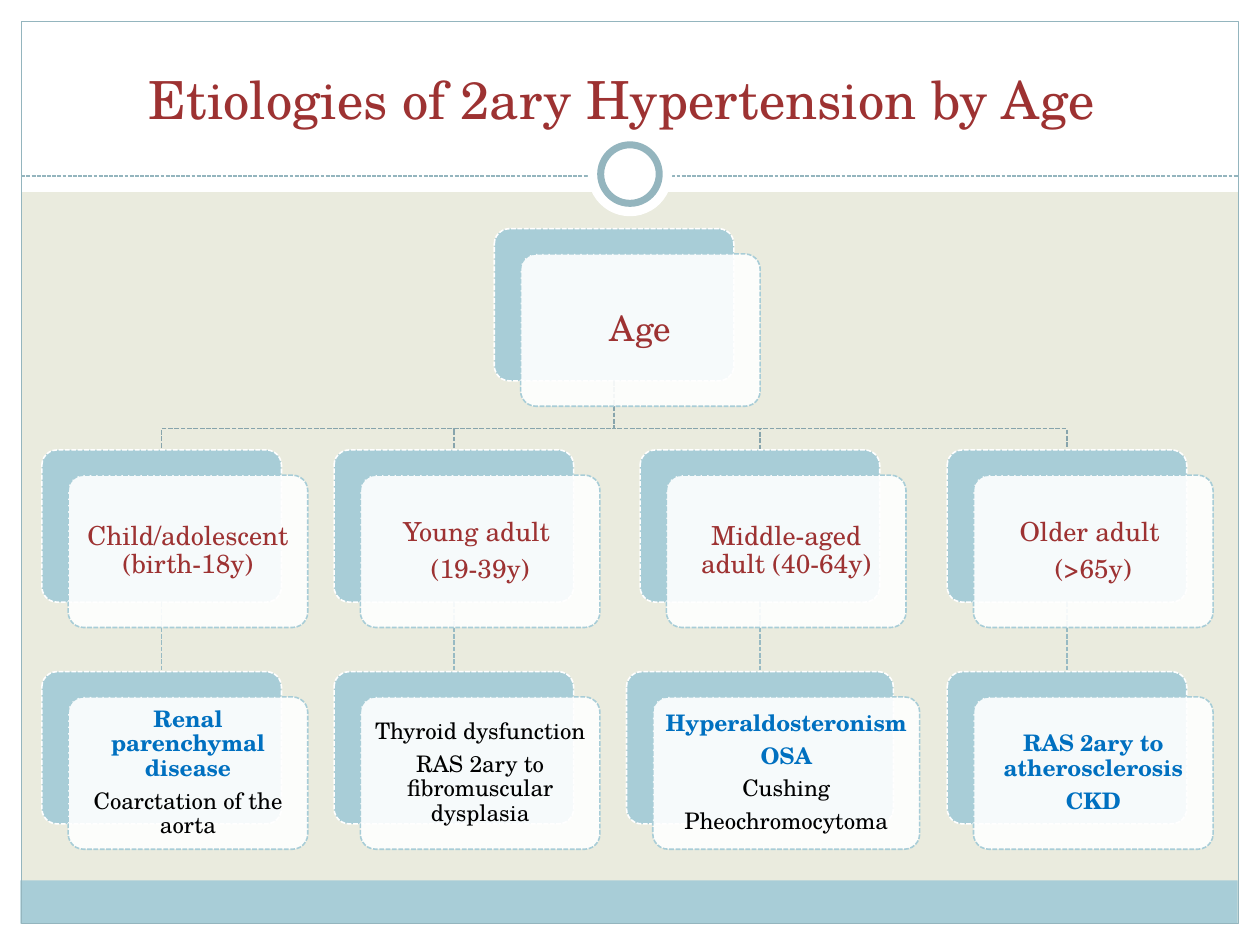
from lxml import etree
from pptx import Presentation
from pptx.dml.color import RGBColor
from pptx.enum.dml import MSO_LINE
from pptx.enum.shapes import MSO_CONNECTOR, MSO_SHAPE
from pptx.enum.text import MSO_ANCHOR, PP_ALIGN
from pptx.oxml.ns import qn
from pptx.util import Cm, Pt

RECTANGLE, ROUNDED, OVAL = MSO_SHAPE.RECTANGLE, MSO_SHAPE.ROUNDED_RECTANGLE, MSO_SHAPE.OVAL
STRAIGHT = MSO_CONNECTOR.STRAIGHT
DASHED = MSO_LINE.SQUARE_DOT
MIDDLE, BOTTOM = MSO_ANCHOR.MIDDLE, MSO_ANCHOR.BOTTOM
CENTER = PP_ALIGN.CENTER

FONT = "TeX Gyre Schola"
WHITE, BLACK, RED, BLUE = "FFFFFF", "000000", "9D3232", "0070C0"
PALE_BLUE, FRAME_BLUE, BEIGE = "A8CDD7", "94B5BE", "EAEBDE"
BRANCH_BLUE, LINK_BLUE = "87A4AC", "98BAC3"


def color(hex_string):
    return RGBColor.from_string(hex_string)


def style(shape, fill=None, line=None, width=0.9, dash=None):
    """Set the fill and line of a shape, or the line of a connector."""
    if hasattr(shape, "fill"):
        shape.shadow.inherit = False
        if fill:
            shape.fill.solid()
            shape.fill.fore_color.rgb = color(fill)
        else:
            shape.fill.background()
    else:
        etree.SubElement(shape.element.spPr, qn("a:effectLst"))
    if line:
        shape.line.color.rgb = color(line)
        shape.line.width = Pt(width)
        shape.line.dash_style = dash
    else:
        shape.line.fill.background()


presentation = Presentation()
presentation.slide_width, presentation.slide_height = Cm(25.4), Cm(19.05)
slide = presentation.slides.add_slide(presentation.slide_layouts[5])
slide.background.fill.solid()
slide.background.fill.fore_color.rgb = color(BEIGE)
shapes = slide.shapes

# White margins, footer band and frame
for left, top, width, height, format_values in [
    (0, 18.62, 25.4, 0.43, {"fill": WHITE}),
    (0, 0, 25.4, 3.87, {"fill": WHITE}),
    (0, 0, 0.43, 19.05, {"fill": WHITE}),
    (24.97, 0, 0.43, 19.05, {"fill": WHITE}),
    (0.41, 17.75, 24.54, 0.87, {"fill": PALE_BLUE}),
    (0.43, 0.43, 24.54, 18.19, {"line": FRAME_BLUE, "width": 0.75}),
]:
    shape = shapes.add_shape(RECTANGLE, Cm(left), Cm(top), Cm(width), Cm(height))
    style(shape, **format_values)

# Dashed rule with the ring on it
rule = shapes.add_connector(STRAIGHT, Cm(0.43), Cm(3.55), Cm(24.97), Cm(3.55))
style(rule, line=FRAME_BLUE, width=0.75, dash=DASHED)
for diameter, format_values in [
    (1.7, {"fill": WHITE}),
    (1.18, {"fill": WHITE, "line": FRAME_BLUE, "width": 4}),
]:
    circle = shapes.add_shape(OVAL, Cm(12.7 - diameter / 2), Cm(3.51 - diameter / 2),
                              Cm(diameter), Cm(diameter))
    style(circle, **format_values)

# Title, in front of the frame
title = shapes.title
title.element.getparent().append(title.element)
title.left, title.top, title.width, title.height = Cm(0.84), Cm(0.64), Cm(23.7), Cm(2.11)
title.text_frame.text = "Etiologies of 2ary Hypertension by Age "
title.text_frame.vertical_anchor = BOTTOM
paragraph = title.text_frame.paragraphs[0]
paragraph.alignment = CENTER
for name, value in {"name": FONT, "size": Pt(30), "bold": False}.items():
    setattr(paragraph.font, name, value)
paragraph.font.color.rgb = color(RED)

# Chart geometry in cm: centres and tops of the blue back cards
CARD_WIDTH, WIDE_CARD, CARD_HEIGHT = 4.83, 5.38, 3.07
SHIFT_X, SHIFT_Y = 0.53, 0.51
AGE_X, COLUMNS = 12.38, [3.26, 9.15, 15.32, 21.51]
ROWS = [4.61, 9.07, 13.54]
BRANCH_Y = 8.64

# Lines from the age card to each group; links are joined to the cards below
links = []
for x in reversed(COLUMNS):
    link = shapes.add_connector(STRAIGHT, Cm(x), Cm(ROWS[1] + CARD_HEIGHT), Cm(x), Cm(ROWS[2]))
    style(link, line=LINK_BLUE, dash=DASHED)
    links.insert(0, link)
    builder = shapes.build_freeform(Cm(AGE_X), Cm(ROWS[0] + CARD_HEIGHT))
    builder.add_line_segments([(Cm(AGE_X), Cm(BRANCH_Y)), (Cm(x), Cm(BRANCH_Y)),
                               (Cm(x), Cm(ROWS[1]))], close=False)
    style(builder.convert_to_shape(), line=BRANCH_BLUE, dash=DASHED)

# Card texts: each paragraph with its colour; blue ones are bold
groups = [
    ["Child/adolescent (birth-18y)"],
    ["Young adult ", "(19-39y)"],
    ["Middle-aged adult (40-64y)"],
    ["Older adult ", "(>65y)"],
]
etiologies = [
    [("Renal parenchymal disease", BLUE), ("Coarctation of the aorta", BLACK)],
    [("Thyroid dysfunction", BLACK), ("RAS 2ary to fibromuscular dysplasia", BLACK)],
    [("Hyperaldosteronism", BLUE), ("OSA", BLUE), ("Cushing", BLACK),
     ("Pheochromocytoma", BLACK)],
    [("RAS 2ary to atherosclerosis", BLUE), ("CKD", BLUE)],
]
# Insets are small because the rounded corners already narrow the text area
cards = [(AGE_X, 0, CARD_WIDTH, 20, 0.2, [("Age", RED)])]
for column, x in enumerate(COLUMNS):
    width = WIDE_CARD if column == 2 else CARD_WIDTH
    cards.append((x, 1, CARD_WIDTH, 15, 0.15, [(line, RED) for line in groups[column]]))
    cards.append((x, 2, width, 13, 0.12, etiologies[column]))

# Cards: a blue back and a translucent white front that holds the text
backs = []
for x, row, width, size, inset, lines in cards:
    left, top = x - width / 2, ROWS[row]
    back, front = [
        shapes.add_shape(ROUNDED, Cm(left + step * SHIFT_X), Cm(top + step * SHIFT_Y),
                         Cm(width), Cm(CARD_HEIGHT))
        for step in range(2)
    ]
    style(back, fill=PALE_BLUE, line=WHITE, dash=DASHED)
    style(front, fill=WHITE, line=PALE_BLUE, dash=DASHED)
    back.adjustments[0] = front.adjustments[0] = 0.1
    front_color = front.element.spPr.find(qn("a:solidFill"))[0]
    etree.SubElement(front_color, qn("a:alpha"), val="90000")
    backs.append(back)

    frame = front.text_frame
    frame.word_wrap = True
    frame.vertical_anchor = MIDDLE
    for side in ("left", "top", "right", "bottom"):
        setattr(frame, f"margin_{side}", Cm(inset))
    for number, (text, text_color) in enumerate(lines):
        paragraph = frame.add_paragraph() if number else frame.paragraphs[0]
        for name, value in {"alignment": CENTER, "line_spacing": 0.9,
                            "space_after": Pt(0.35 * size)}.items():
            setattr(paragraph, name, value)
        run = paragraph.add_run()
        run.text = text
        for name, value in {"name": FONT, "size": Pt(size),
                            "bold": text_color == BLUE}.items():
            setattr(run.font, name, value)
        run.font.color.rgb = color(text_color)

# Join each group card to its etiologies
for link, group_card, etiology_card in zip(links, backs[1::2], backs[2::2]):
    link.begin_connect(group_card, 2)
    link.end_connect(etiology_card, 0)

presentation.save("out.pptx")
